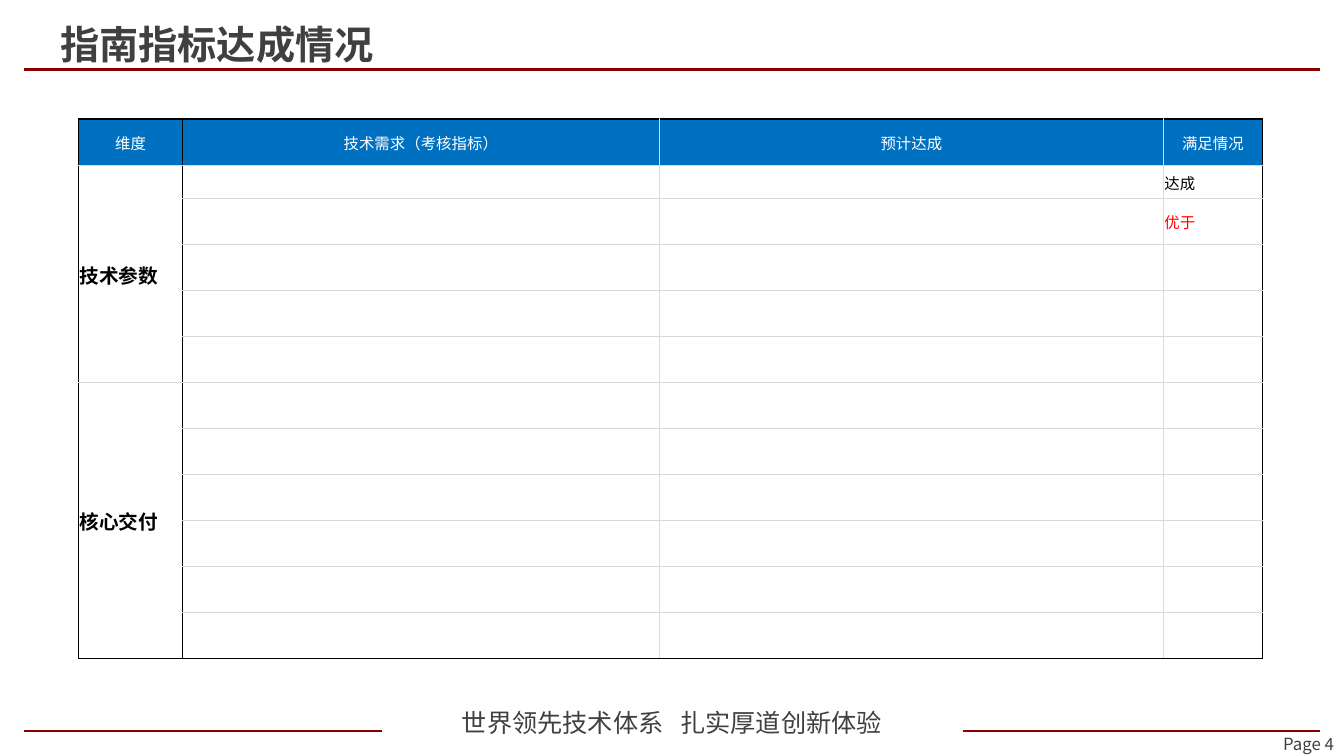
from dataclasses import dataclass

from lxml.etree import SubElement
from pptx import Presentation
from pptx.dml.color import RGBColor
from pptx.enum.shapes import MSO_CONNECTOR
from pptx.enum.text import MSO_ANCHOR, PP_ALIGN
from pptx.oxml.ns import qn
from pptx.util import Inches, Pt

FONT = "Noto Sans CJK SC"
RED, GREY, BLUE, RULE = "8A0000", "404040", "0070C0", "D9D9D9"
BLACK, WHITE = "000000", "FFFFFF"


@dataclass
class Line:
    left: float
    right: float
    y: float


@dataclass
class Dimension:
    name: str
    row: int
    span: int


@dataclass
class Status:
    text: str
    row: int
    color: str


LINES = [Line(0.24, 13.09, 0.69), Line(0.24, 3.79, 7.25), Line(9.55, 13.09, 7.25)]
HEADERS = ["维度", "技术需求（考核指标）", "预计达成", "满足情况"]
DIMENSIONS = [Dimension("技术参数", 1, 5), Dimension("核心交付", 6, 6)]
STATUSES = [Status("达成", 1, BLACK), Status("优于", 2, "FF0000")]

# Table geometry: header, short first row, then equal rows
TABLE_LEFT, TABLE_TOP, TABLE_HEIGHT = 0.78, 1.18, 5.36
COLS = [1.03, 4.73, 5, 0.98]
HEADER_H, FIRST_H, EQUAL_ROWS = 0.46, 0.33, 10
ROWS = [HEADER_H, FIRST_H] + [(TABLE_HEIGHT - HEADER_H - FIRST_H) / EQUAL_ROWS] * EQUAL_ROWS


def rgb(color: str) -> RGBColor:
    return RGBColor.from_string(color)


def add_text(p, text: str, *, size: float, color: str = GREY, bold: bool = False,
             align=PP_ALIGN.LEFT, tracking: float = 0) -> None:
    p.alignment = align
    r = p.add_run()
    r.text = text
    r.font.size = Pt(size)
    r.font.bold = bold
    r.font.name = FONT
    r.font.color.rgb = rgb(color)
    r_pr = r.font._element
    SubElement(r_pr, qn("a:ea")).set("typeface", FONT)
    if tracking:
        r_pr.set("spc", str(int(tracking * 100)))


def add_box(s, left: float, top: float, width: float, height: float, *,
            anchor=MSO_ANCHOR.MIDDLE, inset: bool = True):
    tf = s.shapes.add_textbox(Inches(left), Inches(top), Inches(width), Inches(height)).text_frame
    tf.word_wrap = True
    tf.vertical_anchor = anchor
    tf.margin_left = tf.margin_right = Inches(0.1 if inset else 0)
    tf.margin_top = tf.margin_bottom = Inches(0.05 if inset else 0)
    return tf.paragraphs[0]


def add_line(s, line: Line) -> None:
    c = s.shapes.add_connector(MSO_CONNECTOR.STRAIGHT, Inches(line.left), Inches(line.y),
                               Inches(line.right), Inches(line.y))
    c.line.color.rgb = rgb(RED)
    c.line.width = Pt(1.5)
    SubElement(c._element.spPr, qn("a:effectLst"))


def set_borders(cell, row: int, col: int, span: int) -> None:
    """Black on the outer frame and beside the dimension column, light grey inside."""
    def vertical(edge: int) -> str:
        return BLACK if edge in (0, 1, len(COLS)) else RULE

    def horizontal(edge: int) -> str:
        return BLACK if edge in (0, len(ROWS)) else RULE

    # The header's second divider column edge is the only inner black line
    borders = {"a:lnL": vertical(col), "a:lnR": vertical(col + 1),
               "a:lnT": horizontal(row), "a:lnB": horizontal(row + span)}
    tc_pr = cell._tc.get_or_add_tcPr()
    for tag, color in borders.items():
        ln = SubElement(tc_pr, qn(tag), w=str(Pt(1)))
        SubElement(SubElement(ln, qn("a:solidFill")), qn("a:srgbClr"), val=color)


def add_table(s) -> None:
    shape = s.shapes.add_table(len(ROWS), len(COLS), Inches(TABLE_LEFT), Inches(TABLE_TOP),
                               Inches(sum(COLS)), Inches(TABLE_HEIGHT))
    table = shape.table
    table.first_row = table.horz_banding = False
    for column, width in zip(table.columns, COLS):
        column.width = Inches(width)
    for row, height in zip(table.rows, ROWS):
        row.height = Inches(height)

    # Cell format
    spans = {(d.row, 0): d.span for d in DIMENSIONS}
    for row in range(len(ROWS)):
        for col in range(len(COLS)):
            cell = table.cell(row, col)
            cell.margin_left = cell.margin_right = cell.margin_top = Inches(0.01)
            cell.margin_bottom = 0
            cell.vertical_anchor = MSO_ANCHOR.MIDDLE
            set_borders(cell, row, col, spans.get((row, col), 1))
            if row == 0:
                cell.fill.solid()
                cell.fill.fore_color.rgb = rgb(BLUE)
            else:
                cell.fill.background()
            end = cell.text_frame.paragraphs[0]._p.get_or_add_endParaRPr()
            end.set("sz", "1100")

    # Cell text
    for col, header in enumerate(HEADERS):
        add_text(table.cell(0, col).text_frame.paragraphs[0], header,
                 size=11, color=WHITE, align=PP_ALIGN.CENTER)
    for d in DIMENSIONS:
        cell = table.cell(d.row, 0)
        cell.merge(table.cell(d.row + d.span - 1, 0))
        add_text(cell.text_frame.paragraphs[0], d.name, size=14, color=BLACK, bold=True)
    for status in STATUSES:
        add_text(table.cell(status.row, len(COLS) - 1).text_frame.paragraphs[0],
                 status.text, size=11, color=status.color)


def main() -> None:
    prs = Presentation()
    prs.slide_width, prs.slide_height = Inches(13.33), Inches(7.5)
    s = prs.slides.add_slide(prs.slide_layouts[6])

    # Rules above and below the content
    for line in LINES:
        add_line(s, line)

    # Footer slogan, its halves parted by one widened space
    p = add_box(s, 0, 7.02, 13.33, 0.4, anchor=MSO_ANCHOR.TOP, inset=False)
    for part, tracking in [("世界领先技术体系", 0), (" ", 8), ("扎实厚道创新体验", 0)]:
        add_text(p, part, size=18, align=PP_ALIGN.CENTER, tracking=tracking)

    # Page number
    add_text(add_box(s, 10.33, 7.18, 3, 0.4), "Page 4", size=12, align=PP_ALIGN.RIGHT)

    # Title
    p = add_box(s, 0.5, 0.14, 9.42, 0.64)
    p.line_spacing = 0.9
    add_text(p, "指南指标达成情况", size=28, bold=True)

    add_table(s)
    prs.save("out.pptx")


if __name__ == "__main__":
    main()
